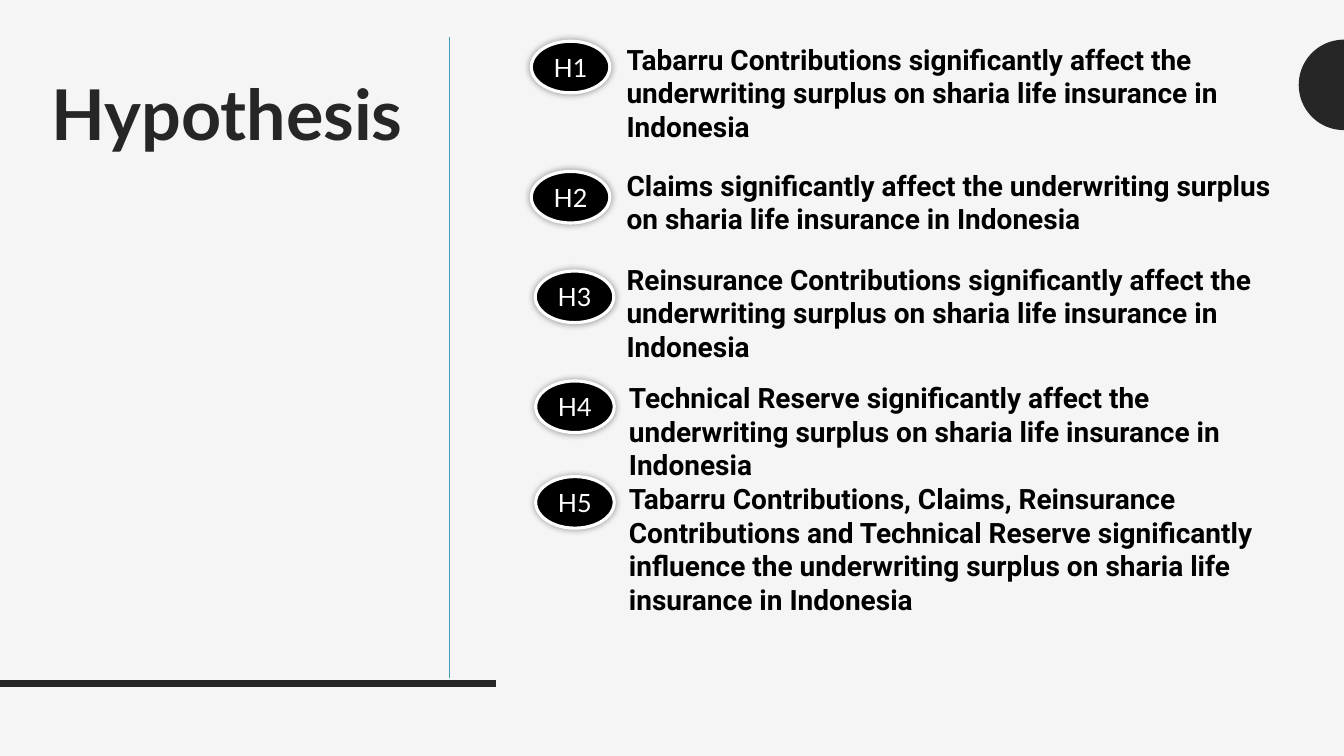
import math
from dataclasses import dataclass

from lxml import etree
from pptx import Presentation
from pptx.dml.color import RGBColor
from pptx.enum.shapes import MSO_CONNECTOR, MSO_SHAPE
from pptx.enum.text import MSO_ANCHOR, MSO_AUTO_SIZE, PP_ALIGN
from pptx.oxml.ns import qn
from pptx.slide import Slide
from pptx.text.text import TextFrame
from pptx.util import Cm, Pt

STRAIGHT = MSO_CONNECTOR.STRAIGHT
OVAL = MSO_SHAPE.OVAL
TOP, MIDDLE = MSO_ANCHOR.TOP, MSO_ANCHOR.MIDDLE
NO_FIT, GROW = MSO_AUTO_SIZE.NONE, MSO_AUTO_SIZE.SHAPE_TO_FIT_TEXT
LEFT, CENTER, RIGHT = PP_ALIGN.LEFT, PP_ALIGN.CENTER, PP_ALIGN.RIGHT

SLIDE_WIDTH, SLIDE_HEIGHT = 33.87, 19.05
BADGE_WIDTH, BADGE_HEIGHT = 1.98, 1.3
STATEMENT_WIDTH = 16.94


@dataclass(frozen=True)
class Theme:
    background: str = "F5F5F5"
    dark: str = "262626"
    divider: str = "439EB7"
    black: str = "000000"
    white: str = "FFFFFF"
    heading_font: str = "Lato"
    body_font: str = "Roboto"
    title_size: int = 50
    statement_size: int = 20
    badge_size: int = 18


@dataclass(frozen=True)
class Hypothesis:
    """A numbered badge and its statement; lengths in centimetres."""
    label: str
    badge_left: float
    badge_top: float
    text_left: float
    text_top: float
    text_height: float
    statement: str


@dataclass(frozen=True)
class Rule:
    """A straight line; lengths in centimetres, weight in points."""
    x1: float
    y1: float
    x2: float
    y2: float
    color: str
    weight: float


THEME = Theme()
OUTCOME = "the underwriting surplus on sharia life insurance in Indonesia"
HYPOTHESES = [
    Hypothesis("H1", 13.39, 1.04, 15.54, 0.94, 2.82,
               f"Tabarru Contributions significantly affect {OUTCOME}"),
    Hypothesis("H2", 13.39, 4.32, 15.54, 4.11, 1.96,
               f"Claims significantly affect {OUTCOME}"),
    Hypothesis("H3", 13.49, 6.83, 15.54, 6.48, 2.82,
               f"Reinsurance Contributions significantly affect {OUTCOME}"),
    Hypothesis("H4", 13.5, 9.6, 15.6, 9.47, 1.96,
               f"Technical Reserve significantly affect {OUTCOME}"),
    Hypothesis("H5", 13.5, 12.01, 15.6, 12.01, 3.68,
               "Tabarru Contributions, Claims, Reinsurance Contributions and "
               f"Technical Reserve significantly influence {OUTCOME}"),
]
RULES = [
    Rule(0, 17.22, 12.5, 17.22, THEME.dark, 4.5),
    Rule(11.33, 0.94, 11.33, 17.09, THEME.divider, 0.5),
]


def rgb(color: str) -> RGBColor:
    return RGBColor.from_string(color)


def write(frame: TextFrame, text: str, font: str, size: int, color: str,
          bold: bool, align: PP_ALIGN) -> None:
    frame.text = text
    paragraph = frame.paragraphs[0]
    paragraph.alignment = align
    run_font = paragraph.runs[0].font
    run_font.name, run_font.size, run_font.bold = font, Pt(size), bold
    run_font.color.rgb = rgb(color)


def draw_title(slide: Slide, text: str) -> None:
    title = slide.shapes.title
    title.left, title.top = Cm(0.2), Cm(1.88)
    title.width, title.height = Cm(10.64), Cm(13.77)
    frame = title.text_frame
    write(frame, text, THEME.heading_font, THEME.title_size, THEME.dark, True, RIGHT)
    frame.paragraphs[0].line_spacing = 0.9
    frame.word_wrap, frame.auto_size = True, NO_FIT
    frame.vertical_anchor = TOP


def draw_half_circle(slide: Slide, center_y: float, radius: float) -> None:
    """Half circle bulging left from the slide's right edge."""
    steps = 40
    angles = [math.pi * (0.5 + step / steps) for step in range(steps + 1)]
    points = [(Cm(SLIDE_WIDTH + radius * math.cos(angle)),
               Cm(center_y - radius * math.sin(angle))) for angle in angles]
    builder = slide.shapes.build_freeform(*points[0])
    builder.add_line_segments(points[1:], close=True)
    half_circle = builder.convert_to_shape()
    half_circle.shadow.inherit = False
    half_circle.fill.solid()
    half_circle.fill.fore_color.rgb = rgb(THEME.dark)
    half_circle.line.fill.background()


def draw_rule(slide: Slide, rule: Rule) -> None:
    line = slide.shapes.add_connector(
        STRAIGHT, Cm(rule.x1), Cm(rule.y1), Cm(rule.x2), Cm(rule.y2))
    line.line.color.rgb = rgb(rule.color)
    line.line.width = Pt(rule.weight)
    etree.SubElement(line._element.spPr, qn("a:effectLst"))


def draw_badge(slide: Slide, item: Hypothesis) -> None:
    badge = slide.shapes.add_shape(OVAL, Cm(item.badge_left), Cm(item.badge_top),
                                   Cm(BADGE_WIDTH), Cm(BADGE_HEIGHT))
    badge.fill.solid()
    badge.fill.fore_color.rgb = rgb(THEME.black)
    badge.line.color.rgb = rgb(THEME.white)
    badge.line.width = Pt(2.25)
    # Soft glow-like shadow: 5 pt blur, 40 % opaque
    badge.shadow.inherit = False
    effects = badge._element.spPr.find(qn("a:effectLst"))
    shadow = etree.SubElement(effects, qn("a:outerShdw"), blurRad=str(Pt(5)),
                              dist="0", dir="0", algn="ctr", rotWithShape="0")
    tint = etree.SubElement(shadow, qn("a:srgbClr"), val=THEME.black)
    etree.SubElement(tint, qn("a:alpha"), val="40000")
    frame = badge.text_frame
    write(frame, item.label, THEME.heading_font, THEME.badge_size, THEME.white,
          False, CENTER)
    frame.word_wrap = False
    frame.vertical_anchor = MIDDLE


def draw_statement(slide: Slide, item: Hypothesis) -> None:
    box = slide.shapes.add_textbox(Cm(item.text_left), Cm(item.text_top),
                                   Cm(STATEMENT_WIDTH), Cm(item.text_height))
    frame = box.text_frame
    write(frame, item.statement, THEME.body_font, THEME.statement_size,
          THEME.black, True, LEFT)
    frame.word_wrap, frame.auto_size = True, GROW


def main() -> None:
    deck = Presentation()
    deck.slide_width, deck.slide_height = Cm(SLIDE_WIDTH), Cm(SLIDE_HEIGHT)
    slide = deck.slides.add_slide(deck.slide_layouts.get_by_name("Title Only"))
    slide.background.fill.solid()
    slide.background.fill.fore_color.rgb = rgb(THEME.background)

    # Frame of the slide
    draw_half_circle(slide, center_y=2.14, radius=1.14)
    for rule in RULES:
        draw_rule(slide, rule)
    draw_title(slide, "Hypothesis ")

    # Numbered hypotheses
    for item in HYPOTHESES:
        draw_badge(slide, item)
        draw_statement(slide, item)

    deck.save("out.pptx")


if __name__ == "__main__":
    main()
